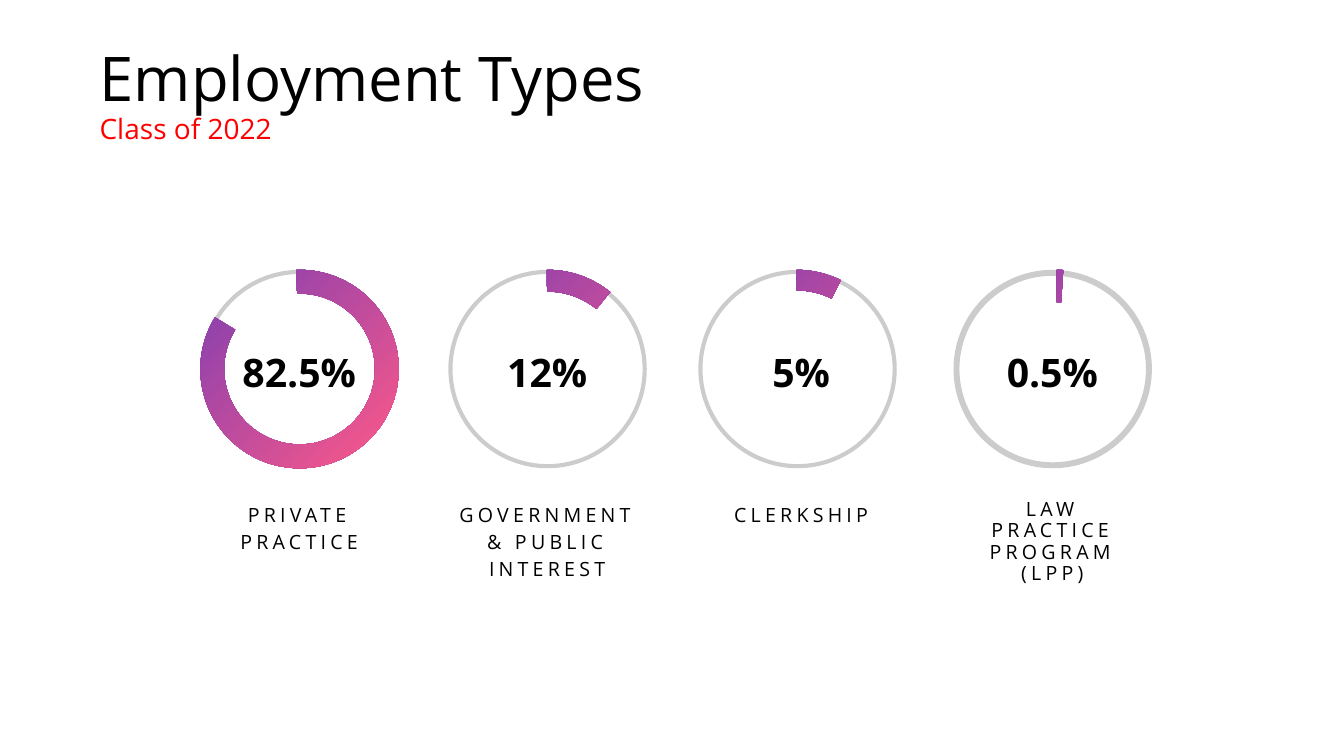
from lxml import etree
from pptx import Presentation
from pptx.dml.color import RGBColor
from pptx.enum.shapes import MSO_SHAPE as SHAPE
from pptx.enum.text import MSO_ANCHOR as ANCHOR, MSO_AUTO_SIZE as AUTO, PP_ALIGN as ALIGN
from pptx.oxml.ns import qn
from pptx.util import Cm, Pt

BLACK = RGBColor(0x00, 0x00, 0x00)
RED = RGBColor(0xFF, 0x00, 0x00)
PURPLE = RGBColor(0x7F, 0x3E, 0xB2)
PINK = RGBColor(0xFF, 0x59, 0x88)
FONT = "Open Sans"
RING = 5.0  # ring diameter, cm

# left, text shift, arc shift, ring thickness, arc (start, end, thickness),
# share, label, label height, label line spacing, label side inset
RINGS = [
    (5.05, 0, 0, 0.021, (160.88, 126.87, 0.12), "82.5%",
     "PRIVATE PRACTICE", 1.6, 1.14, 0.25),
    (11.3, 0, 0, 0.021, (161.77, 185.49, 0.11), "12%",
     "GOVERNMENT & PUBLIC INTEREST", 2.31, 1.14, 0.1),
    (17.6, 0.1, -0.02, 0.021, (161.98, 177.85, 0.104), "5%",
     "CLERKSHIP", 0.91, 1.14, 0.25),
    (24.03, 0, 0.1, 0.03, (161.98, 164.3, 0.163), "0.5%",
     "LAW PRACTICE PROGRAM (LPP)", 2.41, 0.9, 0.25),
]


def add_run(p, text, size=14, color=BLACK, bold=False, spacing=None):
    r = p.add_run()
    r.text = text
    f = r.font
    f.name, f.size, f.bold = FONT, Pt(size), bold
    f.color.rgb = color
    if spacing:
        r._r.get_or_add_rPr().set("spc", str(spacing * 100))


def add_text(shapes, text, left, top, width, height, line=0.9, inset=0.25, **fmt):
    tb = shapes.add_textbox(Cm(left), Cm(top), Cm(width), Cm(height))
    tf = tb.text_frame
    tf.word_wrap = True
    tf.auto_size = AUTO.SHAPE_TO_FIT_TEXT
    tf.margin_left = tf.margin_right = Cm(inset)
    p = tf.paragraphs[0]
    p.alignment, p.line_spacing = ALIGN.CENTER, line
    add_run(p, text, **fmt)


def add_round(shapes, kind, left, top, adjustments):
    sp = shapes.add_shape(kind, Cm(left), Cm(top), Cm(RING), Cm(RING))
    sp.shadow.inherit = False
    sp.line.fill.background()
    for i, value in enumerate(adjustments):
        sp.adjustments[i] = value
    return sp


def add_title(slide, left, top, width, height):
    title = slide.shapes.title
    title.left, title.top, title.width, title.height = map(Cm, (left, top, width, height))
    tf = title.text_frame
    tf.word_wrap, tf.auto_size = True, AUTO.NONE
    tf.vertical_anchor = ANCHOR.TOP
    tf.margin_left = tf.margin_right = Cm(0.22)
    tf.margin_top = tf.margin_bottom = 0
    p = tf.paragraphs[0]
    p.alignment, p.line_spacing = ALIGN.LEFT, 0.9
    add_run(p, "Employment Types", size=44)
    p.add_line_break()
    add_run(p, "Class of 2022", size=20, color=RED)


def add_ring(slide, top, left, text_dx, arc_dx, thickness, arc, share,
             label, label_height, line, inset):
    shapes = slide.shapes.add_group_shape().shapes

    # Pale full circle
    track = add_round(shapes, SHAPE.DONUT, left, top, [thickness])
    track.fill.solid()
    track.fill.fore_color.rgb = BLACK
    color = track.fill._xPr.find(qn("a:solidFill"))[0]
    etree.SubElement(color, qn("a:alpha"), val="20000")

    # Gradient arc for the share
    fill = add_round(shapes, SHAPE.BLOCK_ARC, left + arc_dx, top, arc).fill
    fill.gradient()
    fill.gradient_angle = 315
    for stop, position, rgb in zip(fill.gradient_stops, (0, 1), (PURPLE, PINK)):
        stop.position, stop.color.rgb = position, rgb

    # Share and label
    x = left + text_dx
    add_text(shapes, share, x, top + 1.99, RING - 0.02, 1.35, size=28, bold=True)
    add_text(shapes, label, x, top + 5.67, RING - 0.02, label_height,
             line=line, inset=inset, spacing=3)


def main():
    prs = Presentation()
    prs.slide_width, prs.slide_height = Cm(33.87), Cm(19.05)
    slide = prs.slides.add_slide(prs.slide_layouts[5])
    add_title(slide, 2.29, 1.22, 23.93, 1.37)
    for ring in RINGS:
        add_ring(slide, 6.8, *ring)
    prs.save("out.pptx")


if __name__ == "__main__":
    main()
